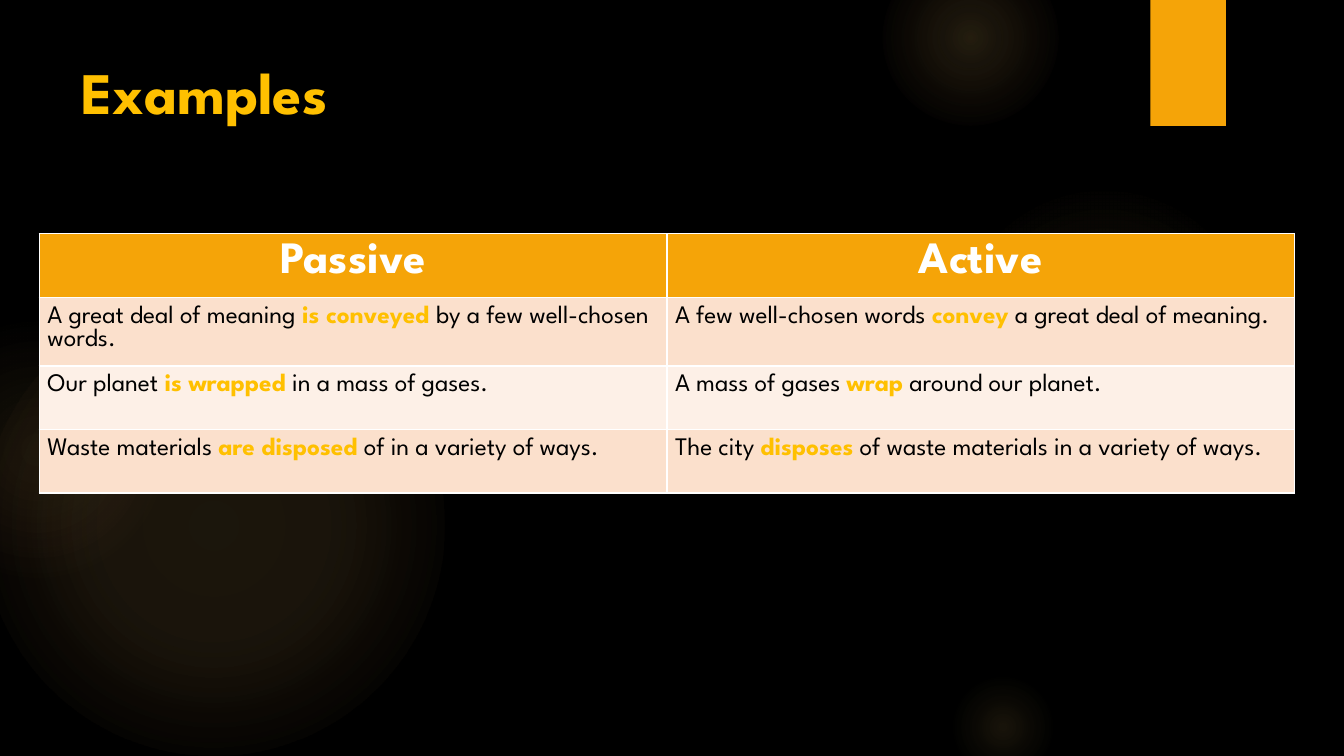
from pptx import Presentation
from pptx.dml.color import RGBColor
from pptx.enum.shapes import MSO_SHAPE
from pptx.enum.text import MSO_ANCHOR, PP_ALIGN
from pptx.oxml import parse_xml
from pptx.oxml.ns import nsdecls, qn
from pptx.util import Inches, Pt

FONT = "League Spartan"
ORANGE, GOLD, WHITE, BLACK = "F5A408", "FFC000", "FFFFFF", "000000"
PEACH, PALE_PEACH = "FBE0CC", "FDF0E7"
GLOW = "FAC96A"


def rgb(value):
    return RGBColor.from_string(value)


def style_run(run, size, color, bold):
    run.font.name = FONT
    run.font.size = Pt(size)
    run.font.bold = bold
    run.font.color.rgb = rgb(color)


prs = Presentation()
prs.slide_width, prs.slide_height = Inches(13.33), Inches(7.5)
slide = prs.slides.add_slide(prs.slide_layouts[6])
slide.background.fill.solid()
slide.background.fill.fore_color.rgb = rgb(BLACK)

# Glowing circles: left, top, diameter, (position %, colour, opacity %) stops
glows = [
    (-0.17, 2.92, 4.58, [(0, GLOW, 11), (36, GLOW, 10), (75, GLOW, 0)]),
    (-0.92, 3.17, 2.58, [(0, GLOW, 8), (36, GLOW, 5), (71, "F59B74", 0)]),
    (9.41, 1.83, 3.08, [(0, GLOW, 7), (36, GLOW, 6), (69, GLOW, 0)]),
    (8.75, -0.5, 1.75, [(0, GLOW, 14), (36, GLOW, 7), (73, GLOW, 0)]),
    (9.41, 6.67, 1.08, [(0, GLOW, 10), (31, GLOW, 5), (66, GLOW, 0)]),
]
for left, top, diameter, stops in glows:
    glow = slide.shapes.add_shape(MSO_SHAPE.OVAL, Inches(left), Inches(top),
                                  Inches(diameter), Inches(diameter))
    glow.shadow.inherit = False
    glow.line.fill.background()
    stop_xml = "".join(
        f'<a:gs pos="{pos * 1000}"><a:srgbClr val="{color}">'
        f'<a:alpha val="{opacity * 1000}"/></a:srgbClr></a:gs>'
        for pos, color, opacity in stops)
    gradient = parse_xml(
        f'<a:gradFill {nsdecls("a")}><a:gsLst>{stop_xml}</a:gsLst><a:path path="circle">'
        '<a:fillToRect l="50000" t="50000" r="50000" b="50000"/></a:path></a:gradFill>')
    glow.element.spPr.find(qn("a:prstGeom")).addnext(gradient)

# Orange tab at the top edge
tab = slide.shapes.add_shape(MSO_SHAPE.RECTANGLE, Inches(11.41), 0,
                             Inches(0.75), Inches(1.25))
tab.shadow.inherit = False
tab.fill.solid()
tab.fill.fore_color.rgb = rgb(ORANGE)
tab.line.fill.background()

# Title
title = slide.shapes.add_textbox(Inches(0.71), Inches(0.5), Inches(10.29), Inches(1.53))
title.text_frame.word_wrap = True
title.text_frame.vertical_anchor = MSO_ANCHOR.TOP
title.text_frame.text = "Examples"
style_run(title.text_frame.paragraphs[0].runs[0], 42, GOLD, True)

# Sentence pairs, each split as (before, verb, after)
headings = ["Passive", "Active"]
sentences = [
    [("A great deal of meaning ", "is conveyed ", "by a few well-chosen words."),
     ("A few well-chosen words ", "convey", " a great deal of meaning.")],
    [("Our planet ", "is wrapped", " in a mass of gases."),
     ("A mass of gases ", "wrap", " around our planet.")],
    [("Waste materials ", "are disposed", " of in a variety of ways."),
     ("The city ", "disposes", " of waste materials in a variety of ways.")],
]
rows = [[(heading,) for heading in headings]] + sentences

# Table; its white rules come from the default table style
examples = slide.shapes.add_table(len(rows), 2, Inches(0.39), Inches(2.32),
                                  Inches(12.45), Inches(2.52)).table
for row_index, row in enumerate(rows):
    is_heading = row_index == 0
    if is_heading:
        row_fill = ORANGE
    else:
        row_fill = PEACH if row_index % 2 else PALE_PEACH
    for column_index, parts in enumerate(row):
        cell = examples.cell(row_index, column_index)
        cell.margin_left = cell.margin_right = cell.margin_top = Inches(0.08)
        cell.margin_bottom = 0
        cell.fill.solid()
        cell.fill.fore_color.rgb = rgb(row_fill)

        paragraph = cell.text_frame.paragraphs[0]
        paragraph.alignment = PP_ALIGN.CENTER if is_heading else PP_ALIGN.LEFT
        for part_index, part in enumerate(parts):
            run = paragraph.add_run()
            run.text = part
            is_verb = part_index == 1
            if is_heading:
                style_run(run, 32, WHITE, True)
            else:
                style_run(run, 18, GOLD if is_verb else BLACK, is_verb)

prs.save("out.pptx")
